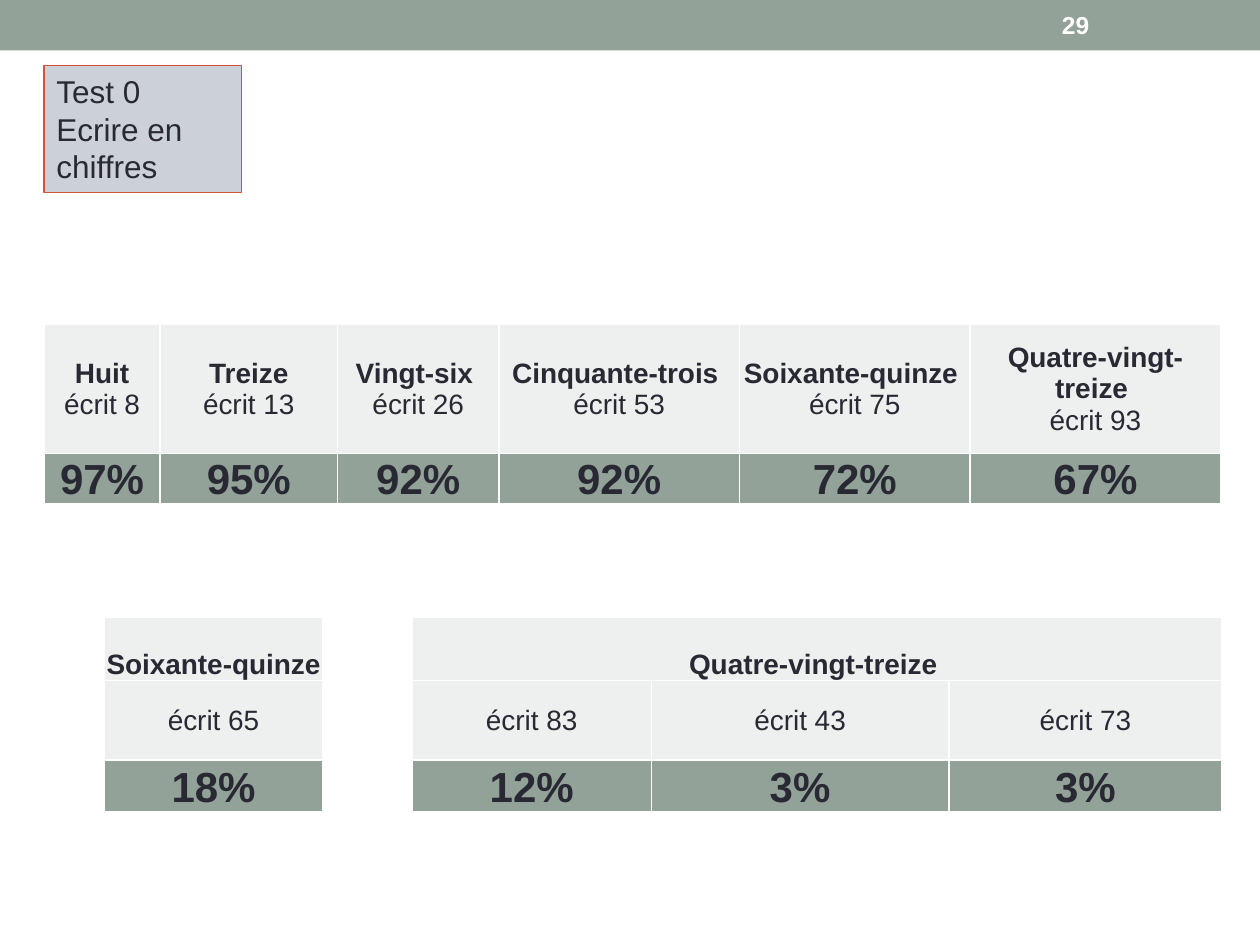
from lxml.etree import SubElement
from pptx import Presentation
from pptx.dml.color import RGBColor
from pptx.enum.shapes import MSO_SHAPE
from pptx.enum.text import MSO_ANCHOR, PP_ALIGN
from pptx.oxml.ns import qn
from pptx.util import Inches, Pt

INK, SAGE, PALE, WHITE = "292934", "93A299", "EEF0EF", "FFFFFF"
NAME = {"size": Pt(16), "bold": True}
ANSWER = {"size": Pt(16), "bold": False}
RATE = {"size": Pt(24), "bold": True}
MARGINS = {"margin_left": Inches(0.01), "margin_right": Inches(0.01),
           "margin_top": Inches(0.01), "margin_bottom": 0}
MIDDLE, BOTTOM = MSO_ANCHOR.MIDDLE, MSO_ANCHOR.BOTTOM


def set_all(target, values):
    for name, value in values.items():
        setattr(target, name, value)


def paint(color_holder, color):
    """Give a fill a solid colour."""
    color_holder.solid()
    color_holder.fore_color.rgb = RGBColor.from_string(color)


def write(frame, lines, color=INK, align=None):
    """Write (text, font format) pairs, one paragraph each."""
    for index, (text, style) in enumerate(lines):
        para = frame.add_paragraph() if index else frame.paragraphs[0]
        para.alignment = align
        span = para.add_run()
        span.text = text
        set_all(span.font, {"name": "Arial", **style})
        span.font.color.rgb = RGBColor.from_string(color)


def add_box(page, place, fill, line=None):
    box = page.shapes.add_shape(MSO_SHAPE.RECTANGLE, *map(Inches, place))
    box.shadow.inherit = False
    paint(box.fill, fill)
    if line:
        paint(box.line.fill, line)
        box.line.width = Pt(0.75)
    else:
        box.line.fill.background()
    return box


def add_borders(cell):
    """Put white one-point lines on all sides; call before filling the cell."""
    properties = cell._tc.get_or_add_tcPr()
    for side in ("lnL", "lnR", "lnT", "lnB"):
        line = SubElement(properties, qn(f"a:{side}"), w=str(Pt(1)))
        solid = SubElement(line, qn("a:solidFill"))
        SubElement(solid, qn("a:srgbClr"), val=WHITE)


def add_grid(page, left, top, widths, rows):
    """Add a table; each row is (height, fill, anchor, cells of lines)."""
    heights = [row[0] for row in rows]
    place = (left, top, sum(widths), sum(heights))
    table = page.shapes.add_table(len(rows), len(widths), *map(Inches, place)).table
    set_all(table, {"first_row": False, "horz_banding": False})
    for column, width in zip(table.columns, widths):
        column.width = Inches(width)
    for index, (height, fill, anchor, contents) in enumerate(rows):
        table.rows[index].height = Inches(height)
        for column in range(len(widths)):
            cell = table.cell(index, column)
            set_all(cell, {**MARGINS, "vertical_anchor": anchor})
            add_borders(cell)
            paint(cell.fill, fill)
            if column < len(contents):
                write(cell.text_frame, contents[column], align=PP_ALIGN.CENTER)
        if len(contents) < len(widths):
            table.cell(index, 0).merge(table.cell(index, len(widths) - 1))


def add_success_table(page):
    results = [("Huit", 8, 97), ("Treize", 13, 95), ("Vingt-six ", 26, 92),
               ("Cinquante-trois ", 53, 92), ("Soixante-quinze ", 75, 72),
               ("Quatre-vingt-treize ", 93, 67)]
    heads = [[(name, NAME), (f"écrit {number}", ANSWER)] for name, number, _ in results]
    rates = [[(f"{rate}%", RATE)] for _, _, rate in results]
    add_grid(page, 0.35, 2.57, [0.92, 1.41, 1.28, 1.91, 1.83, 1.99],
             [(1.03, PALE, MIDDLE, heads), (0.4, SAGE, MIDDLE, rates)])


def add_error_table(page, left, widths, name, errors):
    answers = [[(f"écrit {number}", ANSWER)] for number, _ in errors]
    rates = [[(f"{rate}%", RATE)] for _, rate in errors]
    add_grid(page, left, 4.9, widths,
             [(0.5, PALE, BOTTOM, [[(name, NAME)]]),
              (0.63, PALE, MIDDLE, answers),
              (0.41, SAGE, BOTTOM, rates)])


def add_title(page):
    box = add_box(page, (0.35, 0.52, 1.57, 1.01), "CCD1D9", "D2533C")
    set_all(box.text_frame, {"word_wrap": True, "vertical_anchor": MSO_ANCHOR.TOP})
    style = {"size": Pt(18)}
    write(box.text_frame, [("Test 0", style), ("Ecrire en chiffres", style)],
          align=PP_ALIGN.LEFT)


def add_page_number(page):
    box = page.shapes.add_textbox(*map(Inches, (8.33, 0.02, 1.17, 0.36)))
    set_all(box.text_frame, {"word_wrap": True, "vertical_anchor": MIDDLE})
    write(box.text_frame, [("29", {"size": Pt(14), "bold": True})], WHITE)


def main():
    deck = Presentation()
    set_all(deck, {"slide_width": Inches(10), "slide_height": Inches(7.5)})
    page = deck.slides.add_slide(deck.slide_layouts[6])
    add_box(page, (0, 0, 10, 0.4), SAGE)
    add_title(page)
    add_success_table(page)
    add_error_table(page, 0.83, [1.73], "Soixante-quinze", [(65, 18)])
    add_error_table(page, 3.27, [1.9, 2.36, 2.17], "Quatre-vingt-treize ",
                    [(83, 12), (43, 3), (73, 3)])
    add_page_number(page)
    deck.save("out.pptx")


if __name__ == "__main__":
    main()
